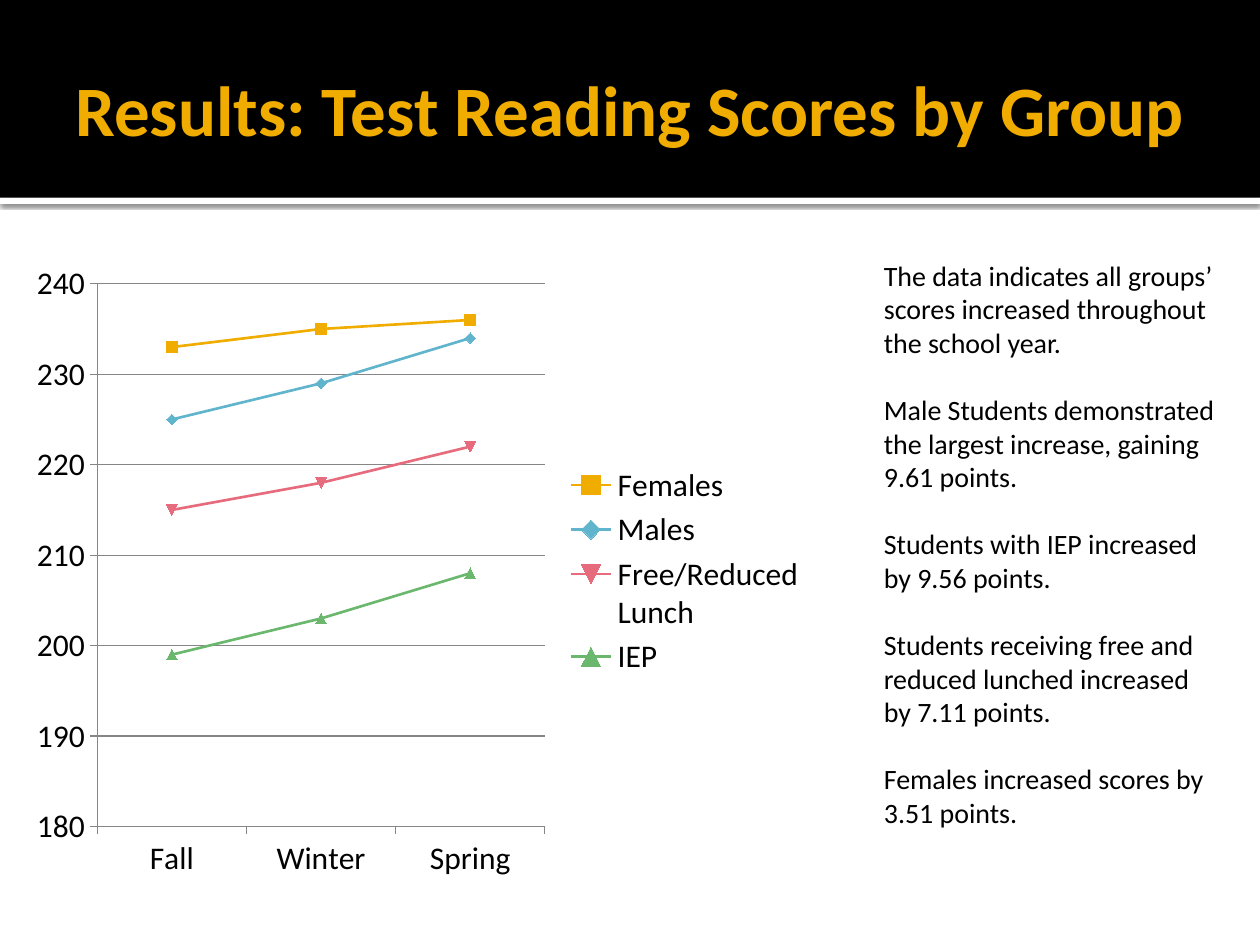
from pptx import Presentation
from pptx import util as u
from pptx.chart.data import CategoryChartData
from pptx.dml.color import RGBColor
from pptx.enum import chart as ch, shapes, text
from pptx.oxml import parse_xml
from pptx.oxml.ns import nsdecls, qn

COLORS = {
    "black": "000000", "white": "FFFFFF", "gold": "F0AD00", "blue": "60B5CC",
    "rose": "E66C7D", "green": "6BB76D", "grid": "868686",
}
SERIES = [
    ("Females", (233, 235, 236), "gold"),
    ("Males", (225, 229, 234), "blue"),
    ("Free/Reduced Lunch", (215, 218, 222), "rose"),
    ("IEP", (199, 203, 208), "green"),
]
FINDINGS = [
    "The data indicates all groups’ scores increased throughout the school year.",
    "Male Students demonstrated the largest increase, gaining 9.61 points.",
    "Students with IEP increased by 9.56 points.",
    "Students receiving free and reduced lunched increased by 7.11 points.",
    "Females increased scores by 3.51 points.",
]


class Deck:
    """Holds the style and the current slide, and draws each kind of element."""

    def __init__(self, slide, font="Calibri"):
        self.s = slide
        self.font = font

    def rgb(self, name):
        return RGBColor.from_string(COLORS[name])

    def style(self, font, size, color="black", bold=False):
        font.name, font.size, font.bold = self.font, u.Pt(size), bold
        font.color.rgb = self.rgb(color)

    def line(self, fmt, color, width):
        fmt.color.rgb = self.rgb(color)
        fmt.width = u.Pt(width)

    def band(self, box, color, shadow=False):
        sp = self.s.shapes.add_shape(shapes.MSO_SHAPE.RECTANGLE, *map(u.Pt, box))
        sp.shadow.inherit = False
        sp.fill.solid()
        sp.fill.fore_color.rgb = self.rgb(color)
        sp.line.fill.background()
        if shadow:
            effects = sp._element.spPr.find(qn("a:effectLst"))
            effects.append(parse_xml(
                f'<a:outerShdw {nsdecls("a")} blurRad="{u.Pt(2.5)}" dist="{u.Pt(0.8)}" '
                'dir="5400000" algn="tl" rotWithShape="0">'
                f'<a:srgbClr val="{COLORS["black"]}"><a:alpha val="60000"/></a:srgbClr>'
                '</a:outerShdw>'))

    def text(self, box, paragraphs, size, color="black", bold=False, gap=0,
             anchor=text.MSO_ANCHOR.TOP, right=7.2):
        tf = self.s.shapes.add_textbox(*map(u.Pt, box)).text_frame
        tf.word_wrap = True
        tf.vertical_anchor = anchor
        tf.margin_right = u.Pt(right)
        for i, words in enumerate(paragraphs):
            p = tf.add_paragraph() if i else tf.paragraphs[0]
            p.space_before = u.Pt(gap if i else 0)
            r = p.add_run()
            r.text = words
            self.style(r.font, size, color, bold)

    def line_chart(self, box, categories, series, low, high, step):
        data = CategoryChartData()
        data.categories = categories
        for name, values, _ in series:
            data.add_series(name, values)
        chart = self.s.shapes.add_chart(
            ch.XL_CHART_TYPE.LINE_MARKERS, *map(u.Pt, box), data).chart
        self.style(chart.font, 18)
        chart.has_title = False
        chart.has_legend = True
        chart.legend.position = ch.XL_LEGEND_POSITION.RIGHT
        chart.legend.include_in_layout = False
        axis = chart.value_axis
        axis.minimum_scale, axis.maximum_scale, axis.major_unit = low, high, step
        axis.has_major_gridlines = True
        self.line(axis.major_gridlines.format.line, "grid", 0.75)
        for ax in (axis, chart.category_axis):
            ax.major_tick_mark = ch.XL_TICK_MARK.OUTSIDE
            self.line(ax.format.line, "grid", 0.75)
        plot = chart.plots[0]
        plot.vary_by_categories = False
        for ser, (_, _, color) in zip(plot.series, series):
            ser.smooth = False
            self.line(ser.format.line, color, 1.5)
            ser.marker.size = 6
            ser.marker.format.fill.solid()
            ser.marker.format.fill.fore_color.rgb = self.rgb(color)
            ser.marker.format.line.fill.background()


def main():
    prs = Presentation()
    prs.slide_width, prs.slide_height = u.Pt(720), u.Pt(540)
    deck = Deck(prs.slides.add_slide(prs.slide_layouts[6]))
    deck.band((0, 113, 720, 3.6), "white", shadow=True)
    deck.band((0, 0, 720, 113), "black")
    deck.text((36, 12.24, 648, 98.6), ["Results: Test Reading Scores by Group"], 40.5,
              "gold", bold=True, anchor=text.MSO_ANCHOR.MIDDLE, right=3.6)
    deck.line_chart((12, 144, 456, 364.5), ("Fall", "Winter", "Spring"), SERIES,
                    180, 240, 10)
    deck.text((498, 144, 204, 356.4), FINDINGS, 16, gap=19.2)
    prs.save("out.pptx")


if __name__ == "__main__":
    main()
